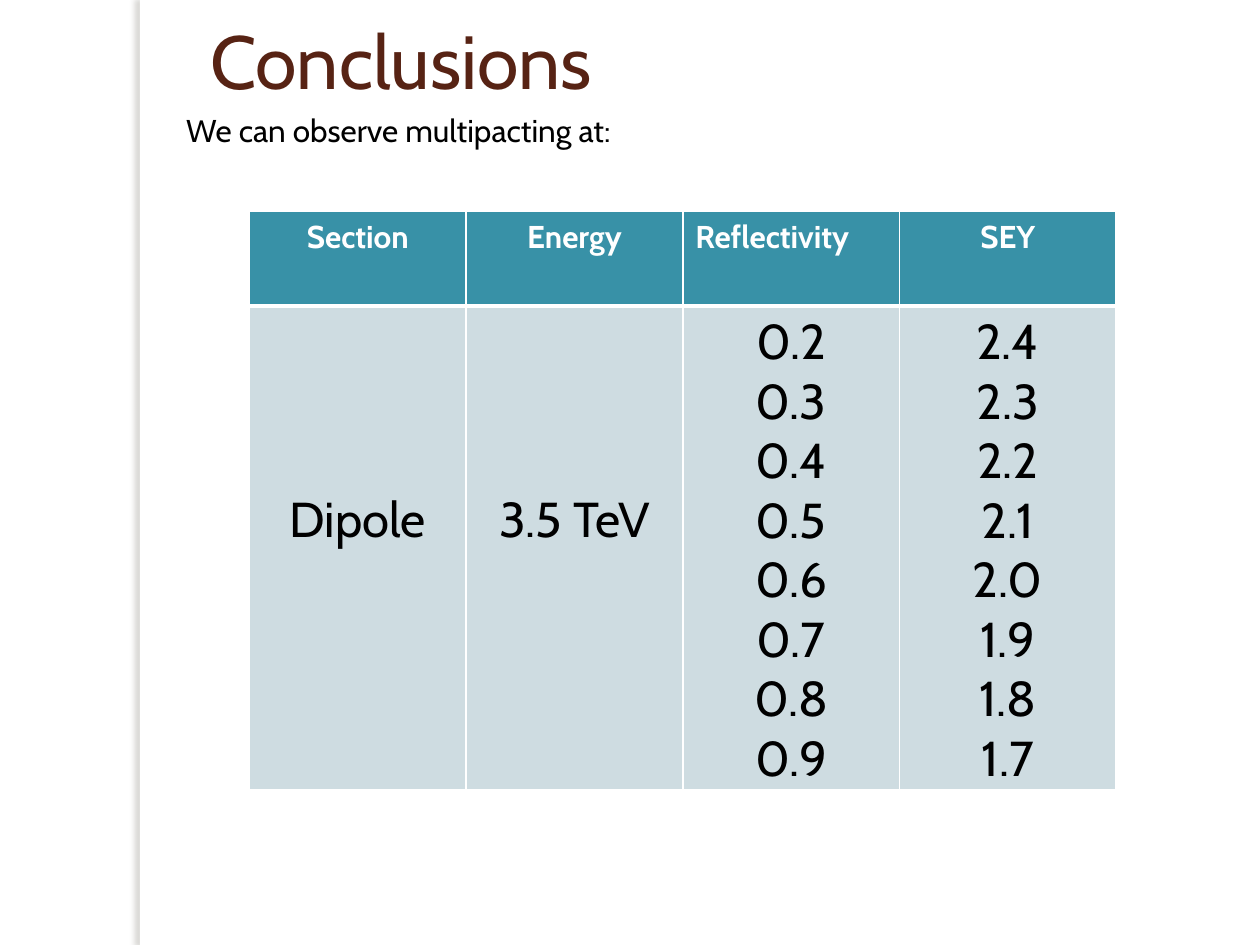
from dataclasses import dataclass

from lxml.etree import SubElement
from pptx import Presentation
from pptx.dml.color import RGBColor
from pptx.enum.shapes import MSO_SHAPE
from pptx.enum.text import MSO_ANCHOR, PP_ALIGN
from pptx.oxml.ns import qn
from pptx.util import Inches, Pt

FONT = "Cabin"
COLORS = {
    "white": "FFFFFF",
    "black": "000000",
    "title": "572314",
    "header": "3891A7",
    "body": "CEDCE1",
    "shadow": "736F63",
}
BODY_LINE_HEIGHT = 0.47
CELL_MARGIN = 0.05


@dataclass
class Column:
    heading: str
    lines: list[str]
    heading_align: PP_ALIGN = PP_ALIGN.CENTER
    skipped_lines: int = 0


COLUMNS = [
    Column("Section", ["Dipole"], skipped_lines=3),
    Column("Energy", ["3.5 TeV"], skipped_lines=3),
    Column("Reflectivity", [f"0.{tenth}" for tenth in range(2, 10)], PP_ALIGN.LEFT),
    Column("SEY", [f"{tenths / 10:.1f}" for tenths in range(24, 16, -1)]),
]


def color(name: str) -> RGBColor:
    return RGBColor.from_string(COLORS[name])


def write_text(text_frame, lines: list[str], *, size: float, color_name: str,
               bold: bool = False, align: PP_ALIGN = PP_ALIGN.LEFT) -> None:
    text_frame.word_wrap = True
    for index, line in enumerate(lines):
        paragraph = text_frame.paragraphs[0] if index == 0 else text_frame.add_paragraph()
        paragraph.alignment = align
        run = paragraph.add_run()
        run.text = line
        run.font.name = FONT
        run.font.size = Pt(size)
        run.font.bold = bold
        run.font.color.rgb = color(color_name)


def add_solid_color(parent, name: str):
    fill = SubElement(parent, qn("a:solidFill"))
    return SubElement(fill, qn("a:srgbClr"), val=COLORS[name])


def style_cell(cell, fill_name: str, top: float, bottom: float) -> None:
    """Fill the cell and give it white borders; widths are in points."""
    properties = cell._tc.get_or_add_tcPr()
    for tag, width in (("lnL", 1), ("lnR", 1), ("lnT", top), ("lnB", bottom)):
        line = SubElement(properties, qn(f"a:{tag}"), w=str(Pt(width)))
        add_solid_color(line, "white")
    cell.fill.solid()
    cell.fill.fore_color.rgb = color(fill_name)


def add_side_strip(slide) -> None:
    strip = slide.shapes.add_shape(
        MSO_SHAPE.RECTANGLE, Inches(1.11), Inches(0), Inches(0.08), Inches(7.5))
    strip.fill.solid()
    strip.fill.fore_color.rgb = color("white")
    strip.line.fill.background()
    strip.shadow.inherit = False
    effects = strip._element.spPr.find(qn("a:effectLst"))
    shadow = SubElement(effects, qn("a:outerShdw"), blurRad=str(Pt(3)),
                        dist=str(Pt(3)), dir=str(180 * 60000), rotWithShape="0")
    SubElement(add_solid_color_child(shadow), qn("a:alpha"), val="25000")


def add_solid_color_child(effect):
    return SubElement(effect, qn("a:srgbClr"), val=COLORS["shadow"])


def add_title(slide, text: str) -> None:
    title = slide.shapes.title
    title.left, title.top = Inches(1.57), Inches(0.06)
    title.width, title.height = Inches(8.2), Inches(1.25)
    title.text_frame.vertical_anchor = MSO_ANCHOR.TOP
    write_text(title.text_frame, [text], size=43, color_name="title")


def add_introduction(slide, text: str) -> None:
    box = slide.shapes.add_textbox(Inches(1.38), Inches(0.83), Inches(8.03), Inches(0.4))
    write_text(box.text_frame, [text], size=18, color_name="black")


def add_results_table(slide, columns: list[Column]) -> None:
    frame = slide.shapes.add_table(
        2, len(columns), Inches(1.98), Inches(1.68), Inches(6.88), Inches(4.59))
    table = frame.table
    table.rows[0].height = Inches(0.75)
    table.rows[1].height = Inches(3.84)
    for index, column in enumerate(columns):
        table.columns[index].width = Inches(1.72)
        heading, body = table.cell(0, index), table.cell(1, index)
        style_cell(heading, "header", top=1, bottom=3)
        write_text(heading.text_frame, [column.heading], size=18, color_name="white",
                   bold=True, align=column.heading_align)
        style_cell(body, "body", top=3, bottom=1)
        body.margin_top = Inches(CELL_MARGIN + column.skipped_lines * BODY_LINE_HEIGHT)
        write_text(body.text_frame, column.lines, size=28, color_name="black",
                   align=PP_ALIGN.CENTER)


def main() -> None:
    presentation = Presentation()
    presentation.slide_width, presentation.slide_height = Inches(10), Inches(7.5)
    slide = presentation.slides.add_slide(presentation.slide_layouts[5])
    add_side_strip(slide)
    add_title(slide, "Conclusions")
    add_introduction(slide, "We can observe multipacting at:")
    add_results_table(slide, COLUMNS)
    presentation.save("out.pptx")


if __name__ == "__main__":
    main()
